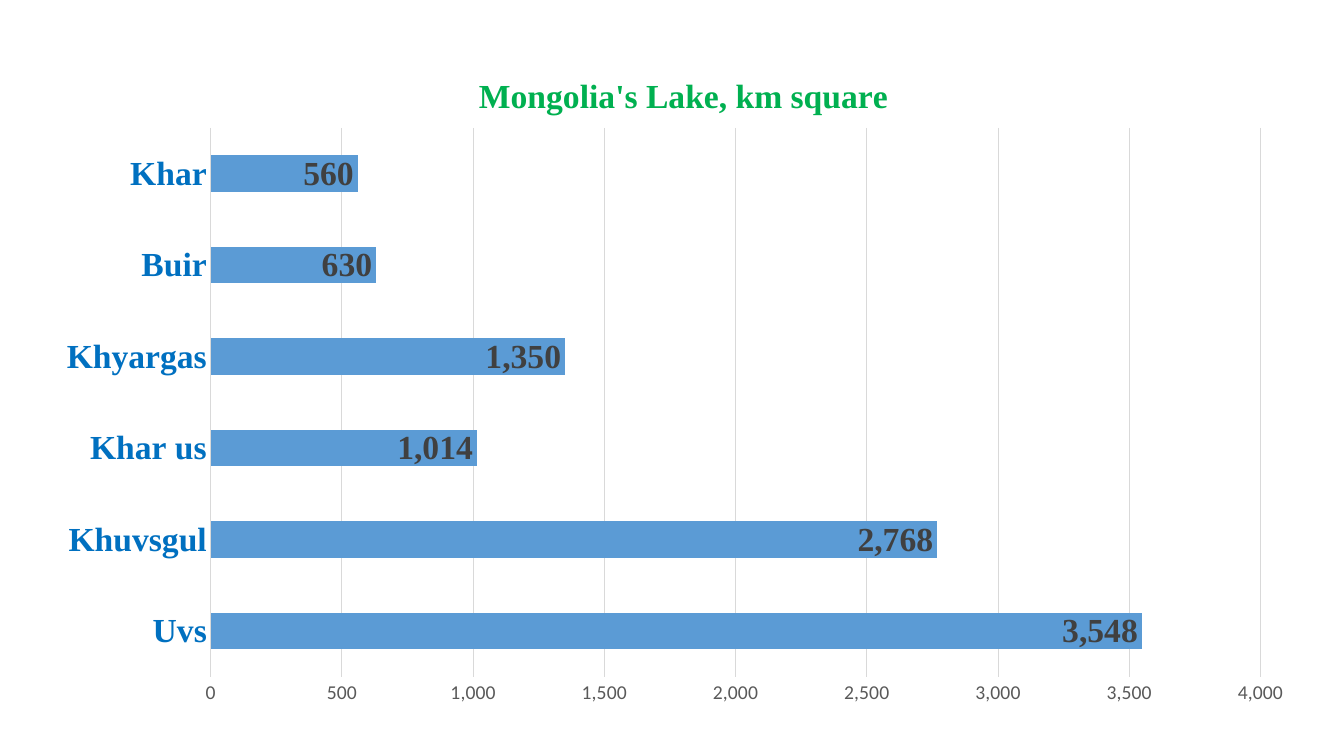
from dataclasses import dataclass

from lxml import etree
from pptx import Presentation
from pptx.chart.data import CategoryChartData
from pptx.dml.color import RGBColor
from pptx.enum import chart as kinds
from pptx.oxml.ns import qn
from pptx.util import Inches, Pt

WIDTH, HEIGHT = 13.33, 7.5
SERIF, SANS = "Times New Roman", "Calibri"
GRID_GREY = "D9D9D9"
NUMBERS = "#,##0"


@dataclass
class Lake:
    name: str
    area: int


@dataclass
class Style:
    size: int
    color: str
    family: str = SERIF
    bold: bool = True


LAKES = [
    Lake("Uvs", 3548),
    Lake("Khuvsgul", 2768),
    Lake("Khar us", 1014),
    Lake("Khyargas", 1350),
    Lake("Buir", 630),
    Lake("Khar", 560),
]
TITLE = Style(24, "00B050")
LAKE_NAMES = Style(24, "0070C0")
AREA_LABELS = Style(24, "404040")
SCALE = Style(14, "595959", SANS, False)
BASE = Style(10, "000000", SANS, False)


def color(value: str) -> RGBColor:
    return RGBColor.from_string(value)


def set_all(target, values: dict) -> None:
    for name, value in values.items():
        setattr(target, name, value)


def style_font(font, style: Style) -> None:
    set_all(font, {"size": Pt(style.size), "bold": style.bold, "name": style.family})
    font.color.rgb = color(style.color)


def style_line(line) -> None:
    line.color.rgb = color(GRID_GREY)
    line.width = Pt(0.75)


def place(parent, position: int, shares: dict, inner: bool = False) -> None:
    """Fix a chart part at shares of the chart's size."""
    for old in parent.findall(qn("c:layout")):
        parent.remove(old)
    layout = etree.Element(qn("c:layout"))
    parent.insert(position, layout)
    manual = etree.SubElement(layout, qn("c:manualLayout"))
    settings = {"layoutTarget": "inner"} if inner else {}
    settings |= {"xMode": "edge", "yMode": "edge"} | shares
    for name, value in settings.items():
        etree.SubElement(manual, qn(f"c:{name}")).set("val", str(value))


def add_lake_chart(page):
    data = CategoryChartData(number_format=NUMBERS)
    data.categories = [lake.name for lake in LAKES]
    data.add_series("Series 1", [lake.area for lake in LAKES])
    frame = page.shapes.add_chart(
        kinds.XL_CHART_TYPE.BAR_STACKED,
        Inches(WIDTH * 0.0315), Inches(HEIGHT * 0.0627),
        Inches(WIDTH * 0.9422), Inches(HEIGHT * 0.8867), data)
    chart = frame.chart
    chart.has_legend = False
    style_font(chart.font, BASE)
    return chart


def style_title(chart) -> None:
    chart.has_title = True
    para = chart.chart_title.text_frame.paragraphs[0]
    span = para.add_run()
    span.text = "Mongolia's Lake, km square"
    style_font(span.font, TITLE)
    chart.chart_title.include_in_layout = False
    place(chart.chart_title._element, 1, {"x": 0.34, "y": 0.03})


def style_axes(chart) -> None:
    no_ticks = {
        "major_tick_mark": kinds.XL_TICK_MARK.NONE,
        "minor_tick_mark": kinds.XL_TICK_MARK.NONE,
    }
    names, scale = chart.category_axis, chart.value_axis
    for axis, style in ((names, LAKE_NAMES), (scale, SCALE)):
        set_all(axis, no_ticks)
        style_font(axis.tick_labels.font, style)
    style_line(names.format.line)

    set_all(scale, {"minimum_scale": 0, "maximum_scale": 4000, "major_unit": 500})
    set_all(scale.tick_labels, {"number_format": NUMBERS, "number_format_is_linked": False})
    scale.format.line.fill.background()
    style_line(scale.major_gridlines.format.line)


def style_bars(chart) -> None:
    plot = chart.plots[0]
    set_all(plot, {"gap_width": 150, "overlap": 100, "vary_by_categories": False})
    bars = plot.series[0]
    bars.format.fill.solid()
    bars.format.fill.fore_color.rgb = color("5B9BD5")
    labels = bars.data_labels
    set_all(labels, {
        "show_value": True,
        "position": kinds.XL_LABEL_POSITION.INSIDE_END,
        "number_format": NUMBERS,
        "number_format_is_linked": False,
    })
    style_font(labels.font, AREA_LABELS)


def main() -> None:
    deck = Presentation()
    set_all(deck, {"slide_width": Inches(WIDTH), "slide_height": Inches(HEIGHT)})
    page = deck.slides.add_slide(deck.slide_layouts[6])

    # Chart of lake areas
    chart = add_lake_chart(page)
    style_title(chart)
    style_axes(chart)
    style_bars(chart)

    # Room for the bars inside the chart
    plot_area = chart._chartSpace.find(".//" + qn("c:plotArea"))
    place(plot_area, 0, {"x": 0.133, "y": 0.12, "w": 0.829, "h": 0.819}, inner=True)

    deck.save("out.pptx")


if __name__ == "__main__":
    main()
